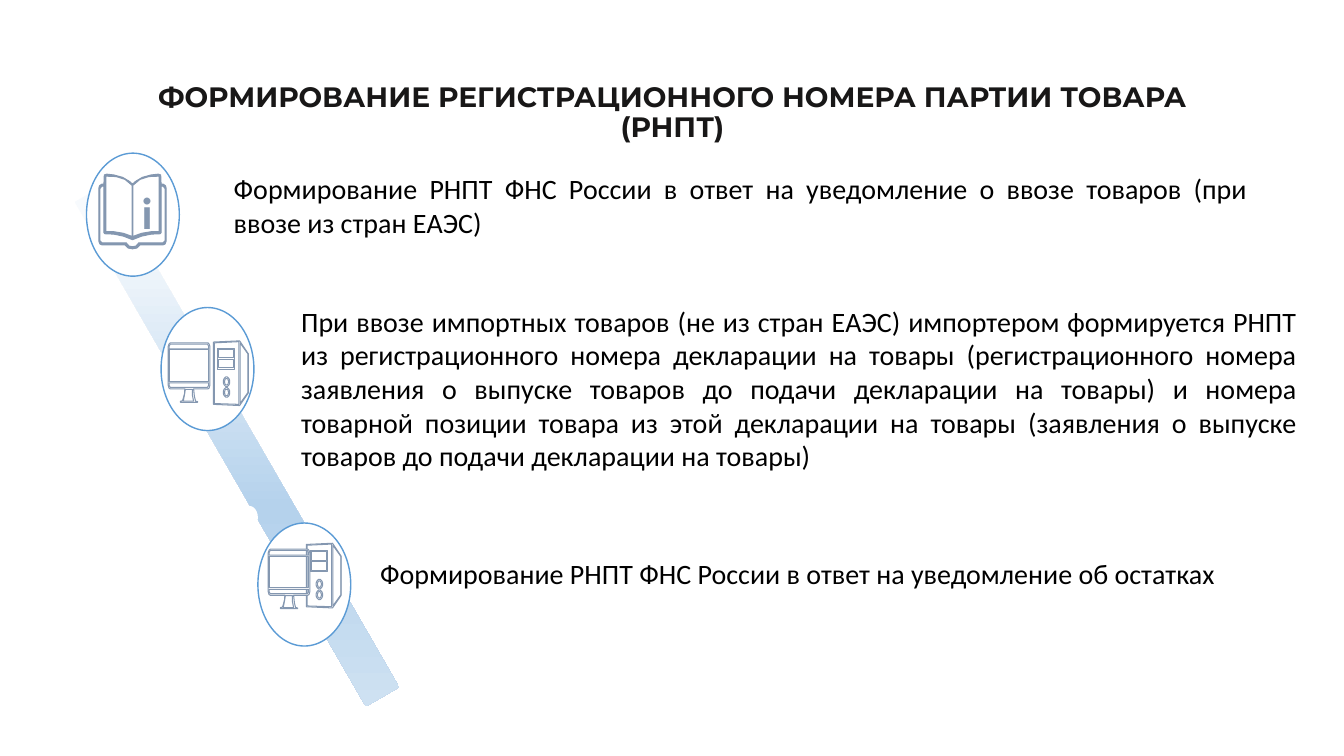
from math import cos, pi, sin

from lxml.etree import SubElement
from pptx import Presentation
from pptx.dml.color import RGBColor
from pptx.enum.shapes import MSO_SHAPE as Shape
from pptx.enum.text import MSO_ANCHOR as Anchor, PP_ALIGN as Align
from pptx.oxml.ns import qn
from pptx.util import Cm, Pt

BLUE, STEEL, WHITE, BLACK = "5B9BD5", "8497B0", "FFFFFF", "000000"
BAR_STOPS = [(9, "F7FAFD"), (62, "B5D2EC"), (100, "CEE1F2")]

# Left, top of each round badge
BADGES = [(2.18, 3.86), (4.06, 7.75), (6.5, 13.18)]

# Left, top, width, height and wording of each step
STEPS = [
    (5.56, 4.14, 26.21, 2.06,
     "Формирование РНПТ ФНС России в ответ на уведомление о ввозе товаров "
     "(при ввозе из стран ЕАЭС)"),
    (7.26, 7.49, 25.76, 4.62,
     "При ввозе импортных товаров (не из стран ЕАЭС) импортером формируется "
     "РНПТ из регистрационного номера декларации на товары (регистрационного "
     "номера заявления о выпуске товаров до подачи декларации на товары) и "
     "номера товарной позиции товара из этой декларации на товары (заявления "
     "о выпуске товаров до подачи декларации на товары)"),
    (9.25, 13.84, 24.38, 1.19,
     "Формирование РНПТ ФНС России в ответ на уведомление об остатках"),
]


def color(value):
    return RGBColor.from_string(value)


def paint(shape, fill, line=None, width=1):
    shape.shadow.inherit = False
    shape.fill.solid()
    shape.fill.fore_color.rgb = color(fill)
    if line:
        shape.line.color.rgb = color(line)
        shape.line.width = Pt(width)
    else:
        shape.line.fill.background()


def add_text(slide, left, top, width, height, text, size=20, font="Calibri",
             ink=BLACK, bold=False, align=Align.CENTER, anchor=Anchor.MIDDLE,
             margins=(0.25, 0.13), spacing=None):
    box = slide.shapes.add_textbox(Cm(left), Cm(top), Cm(width), Cm(height))
    frame = box.text_frame
    frame.word_wrap = True
    frame.vertical_anchor = anchor
    frame.margin_left = frame.margin_right = Cm(margins[0])
    frame.margin_top = frame.margin_bottom = Cm(margins[1])
    paragraph = frame.paragraphs[0]
    paragraph.alignment = align
    paragraph.line_spacing = spacing
    run = paragraph.add_run()
    run.text = text
    run.font.size = Pt(size)
    run.font.name = font
    run.font.bold = bold
    run.font.color.rgb = color(ink)


def add_ellipse(slide, left, top, width, height, line=None):
    shape = slide.shapes.add_shape(Shape.OVAL, Cm(left), Cm(top),
                                   Cm(width), Cm(height))
    paint(shape, WHITE, line)


def add_bar(slide):
    bar = slide.shapes.add_shape(Shape.RECTANGLE, Cm(-1.37), Cm(10.72),
                                 Cm(14.68), Cm(0.97))
    paint(bar, WHITE)
    bar.rotation = 60
    bar.fill.gradient()
    # The gradient runs down the slide, whatever the rotation of the bar
    gradient = bar.fill._xPr.find(qn("a:gradFill"))
    gradient.set("rotWithShape", "0")
    gradient.find(qn("a:lin")).set("ang", "5400000")
    stops = gradient.find(qn("a:gsLst"))
    for stop in list(stops):
        stops.remove(stop)
    for position, value in BAR_STOPS:
        stop = SubElement(stops, qn("a:gs"), pos=str(position * 1000))
        SubElement(stop, qn("a:srgbClr"), val=value)


# Outlines, in hundredths of a centimetre
def box_outline(left, top, right, bottom):
    return [(left, top), (right, top), (right, bottom), (left, bottom)]


def oval_outline(x, y, radius_x, radius_y, count=24):
    angles = [2 * pi * i / count for i in range(count)]
    return [(x + radius_x * cos(a), y + radius_y * sin(a)) for a in angles]


def mirrored(points, width):
    return [(width - x, y) for x, y in reversed(points)]


def add_outline(slide, left, top, contours, fill):
    first, *others = contours
    builder = slide.shapes.build_freeform(*first[0], scale=Cm(0.01))
    builder.add_line_segments(first[1:])
    for contour in others:
        builder.move_to(*contour[0])
        builder.add_line_segments(contour[1:])
    paint(builder.convert_to_shape(Cm(left), Cm(top)), fill, STEEL, 0.75)


def add_tower(slide, left, top):
    contours = [
        [(0, 3), (66, 0), (88, 33), (88, 131), (66, 163), (0, 160)],
        [(2, 5), (64, 2), (64, 160), (2, 158)],
        [(67, 5), (87, 33), (87, 130), (67, 158)],
        box_outline(11, 19, 54, 71),
        box_outline(13, 22, 51, 43),
        box_outline(13, 47, 51, 68),
    ]
    for y in (103, 130):
        contours += [oval_outline(33, y, 8, 12), oval_outline(33, y, 5, 8)]
    add_outline(slide, left, top, contours, WHITE)


def add_monitor(slide, left, top):
    add_outline(slide, left, top, [
        [(0, 9), (2, 3), (5, 0), (100, 0), (103, 3), (105, 9), (105, 107),
         (103, 114), (100, 116), (64, 116), (66, 135), (69, 147), (74, 148),
         (74, 150), (31, 150), (31, 147), (36, 146), (41, 130), (42, 116),
         (5, 116), (2, 114), (0, 107)],
        [(38, 147), (43, 117), (61, 117), (61, 132), (64, 147)],
        [(2, 101), (102, 101), (102, 107), (99, 112), (5, 112), (2, 107)],
        box_outline(2, 18, 102, 97),
        [(2, 15), (2, 9), (5, 3), (99, 3), (102, 9), (102, 15)],
    ], WHITE)


def add_book(slide, left, top):
    width = 170
    edge = [(85, 25), (77, 18), (60, 8), (38, 2), (20, 0), (14, 2), (13, 25),
            (8, 25), (2, 29), (0, 36), (0, 168), (3, 176), (8, 178),
            (66, 178), (74, 186), (85, 188)]
    page = [(18, 5), (18, 145), (38, 145), (62, 149), (84, 157), (84, 28),
            (66, 13), (44, 6), (20, 5)]
    cover = [(85, 165), (62, 156), (38, 151), (15, 150), (13, 147), (13, 30),
             (8, 30), (3, 36), (3, 168), (8, 173), (69, 173), (76, 181),
             (85, 183)]
    add_outline(slide, left, top, [
        edge + mirrored(edge, width),
        page,
        mirrored(page, width),
        cover + mirrored(cover, width),
    ], STEEL)


def main():
    presentation = Presentation()
    presentation.slide_width = Cm(33.87)
    presentation.slide_height = Cm(19.05)
    slide = presentation.slides.add_slide(presentation.slide_layouts[6])

    # Title
    add_text(slide, 2.34, 1.02, 29.21, 3.68,
             "ФОРМИРОВАНИЕ РЕГИСТРАЦИОННОГО НОМЕРА ПАРТИИ ТОВАРА (РНПТ)",
             font="Montserrat", ink="181717", bold=True, spacing=0.9)

    # Slanted bar with badges
    add_bar(slide)
    for left, top in BADGES:
        add_ellipse(slide, left, top, 2.34, 3.1, BLUE)
    add_ellipse(slide, 6.07, 12.75, 0.43, 0.58)

    # Icons
    add_book(slide, 2.49, 4.39)
    add_text(slide, 2.29, 4.45, 2.84, 1.78, "i", size=32, ink=STEEL, bold=True)
    add_tower(slide, 5.38, 8.59)
    add_monitor(slide, 4.24, 8.64)
    add_tower(slide, 7.72, 13.69)
    add_monitor(slide, 6.76, 13.84)

    # Steps
    for left, top, width, height, text in STEPS:
        add_text(slide, left, top, width, height, text, align=Align.JUSTIFY,
                 anchor=Anchor.TOP, margins=(0.33, 0.18))

    presentation.save("out.pptx")


if __name__ == "__main__":
    main()
